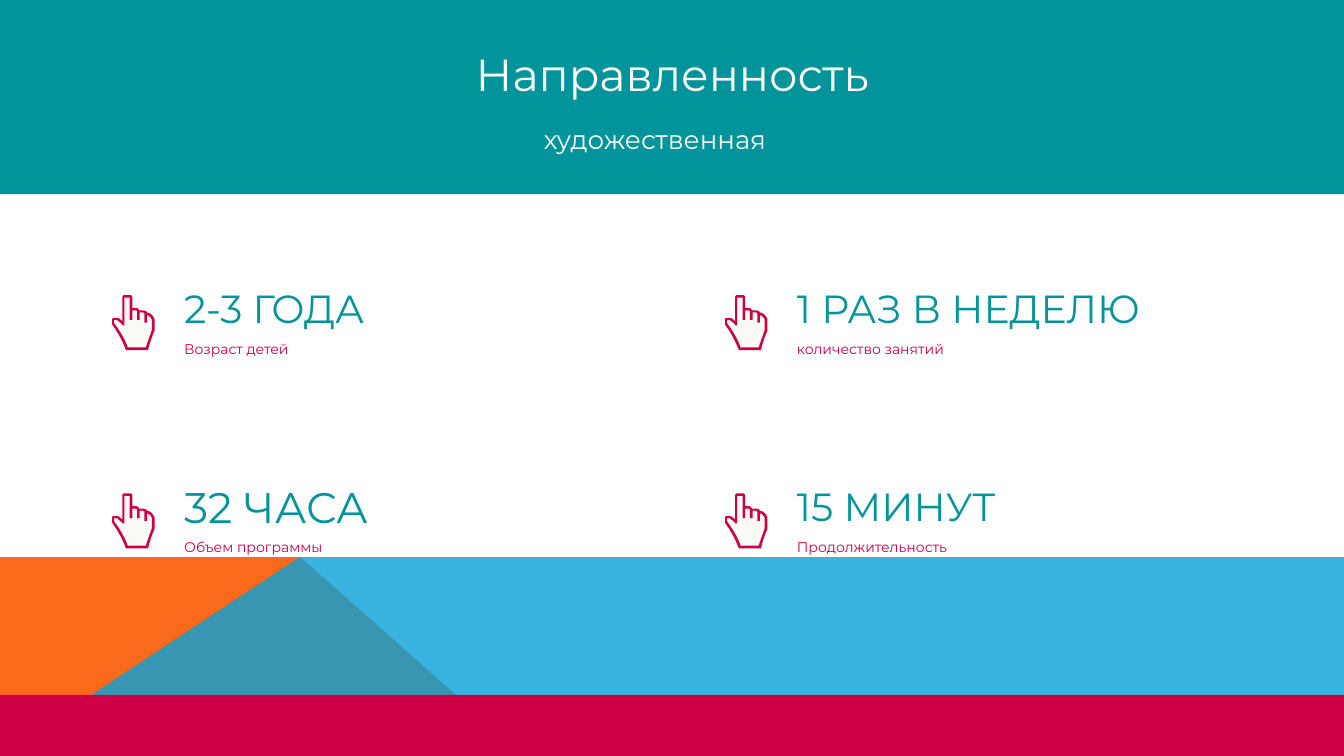
import dataclasses

import lxml.etree
import pptx
import pptx.dml.color
import pptx.enum.shapes
import pptx.enum.text
import pptx.oxml.ns
import pptx.util

COLUMNS, ROWS = 20, 11.25
ALIGN = pptx.enum.text.PP_ALIGN

PALM = [
    (59, 52), (58, 55, 52, 72, 50, 78), (23, 78), (22, 74, 16, 59, 3, 42),
    (3, 37), (7, 37), (8, 38, 12, 41, 15, 44), (15, 45), (18, 45), (18, 4),
    (26, 4), (26, 37), (30, 37), (30, 23), (35, 23), (36, 23, 37, 24, 37, 24),
    (37, 37), (41, 37), (41, 26), (46, 26), (47, 26, 48, 27, 48, 28),
    (48, 41), (52, 41), (52, 30), (55, 30, 59, 35, 59, 37),
]
HAND_EDGE = [
    (52, 26), (51, 24, 49, 23, 46, 23), (40, 23), (40, 21, 37, 19, 35, 19),
    (30, 19), (30, 4), (30, 1, 28, 0, 26, 0), (18, 0), (16, 0, 15, 2, 15, 4),
    (15, 39), (11, 35, 9, 34, 7, 34), (3, 34), (3, 34, 2, 34, 1, 34),
    (0, 35, 0, 36, 0, 37), (0, 44), (14, 63, 20, 81, 20, 81), (21, 82),
    (54, 82), (54, 80), (54, 77, 59, 62, 63, 53), (63, 37),
    (63, 33, 57, 26, 52, 26),
]


@dataclasses.dataclass(frozen=True)
class Theme:
    font: str = "Montserrat"
    teal: str = "01949A"
    crimson: str = "CD0046"
    cream: str = "FBFBF5"
    orange: str = "F96A1B"
    sky: str = "08A1D9"
    title: tuple = (48, 53.3)
    subtitle: tuple = (28, 31.1)
    heading: tuple = (42, 44.1)
    large_heading: tuple = (45.8, 48)
    caption: tuple = (15, 21)


def apply_format(target, values):
    for name, value in values.items():
        setattr(target, name, value)


def flatten(segments, steps=6):
    points = [segments[0]]
    for segment in segments[1:]:
        if len(segment) == 2:
            points.append(segment)
            continue
        curve = [points[-1], segment[:2], segment[2:4], segment[4:]]
        for step in range(1, steps + 1):
            t = step / steps
            weights = ((1 - t) ** 3, 3 * t * (1 - t) ** 2, 3 * t * t * (1 - t), t ** 3)
            points.append(tuple(
                sum(w * p[axis] for w, p in zip(weights, curve)) for axis in (0, 1)
            ))
    return points


class SlideBuilder:
    def __init__(self, presentation, theme):
        self.theme = theme
        self.column = presentation.slide_width / COLUMNS
        self.row = presentation.slide_height / ROWS
        self.slide = presentation.slides.add_slide(presentation.slide_layouts[6])

    def place(self, column, row):
        return round(column * self.column), round(row * self.row)

    def paint(self, shape, color, opacity=None):
        shape.shadow.inherit = False
        shape.fill.solid()
        shape.fill.fore_color.rgb = pptx.dml.color.RGBColor.from_string(color)
        shape.line.fill.background()
        if opacity is not None:
            qn = pptx.oxml.ns.qn
            tint = shape._element.spPr.find(qn("a:solidFill")).find(qn("a:srgbClr"))
            lxml.etree.SubElement(tint, qn("a:alpha")).set("val", str(opacity * 1000))

    def band(self, column, row, columns, rows, color):
        band = self.slide.shapes.add_shape(
            pptx.enum.shapes.MSO_SHAPE.RECTANGLE,
            *self.place(column, row), *self.place(columns, rows),
        )
        self.paint(band, color)

    def outline(self, contours, color, opacity=None):
        first, *others = [[self.place(*point) for point in c] for c in contours]
        builder = self.slide.shapes.build_freeform(*first[0])
        builder.add_line_segments(first[1:], close=True)
        for contour in others:
            builder.move_to(*contour[0])
            builder.add_line_segments(contour[1:], close=True)
        self.paint(builder.convert_to_shape(), color, opacity)

    def text(self, words, column, row, columns, rows, style, color, align=ALIGN.LEFT):
        size, spacing = style
        box = self.slide.shapes.add_textbox(
            *self.place(column, row), *self.place(columns, rows)
        )
        frame = box.text_frame
        apply_format(frame, {
            "margin_left": 0, "margin_right": 0, "margin_top": 0, "margin_bottom": 0,
            "word_wrap": True,
            "auto_size": pptx.enum.text.MSO_AUTO_SIZE.SHAPE_TO_FIT_TEXT,
        })
        paragraph = frame.paragraphs[0]
        apply_format(paragraph, {
            "alignment": align, "line_spacing": pptx.util.Pt(spacing),
        })
        run = paragraph.add_run()
        run.text = words
        apply_format(run.font, {"name": self.theme.font, "size": pptx.util.Pt(size)})
        run.font.color.rgb = pptx.dml.color.RGBColor.from_string(color)

    def hand(self, column, row):
        palm, edge = (
            [(column + x / 100, row + y / 100) for x, y in flatten(segments)]
            for segments in (PALM, HAND_EDGE)
        )
        self.outline([palm], self.theme.cream)
        self.outline([edge, palm], self.theme.crimson)

    def fact(self, column, row, heading, caption, style, rise, rows):
        left = column + 1.07
        self.text(heading, left, row - rise, 6.47, rows, style, self.theme.teal)
        self.text(caption, left, row + 0.63, 6.47, 0.28,
                  self.theme.caption, self.theme.crimson)


def main():
    presentation = pptx.Presentation()
    apply_format(presentation, {
        "slide_width": pptx.util.Inches(20), "slide_height": pptx.util.Inches(11.25),
    })
    theme = Theme()
    page = SlideBuilder(presentation, theme)

    regular = (theme.heading, 0.07, 0.64)
    large = (theme.large_heading, 0.09, 0.71)
    facts = [
        ("2-3 ГОДА", "Возраст детей", regular),
        ("32 ЧАСА", "Объем программы", large),
        ("1 РАЗ В НЕДЕЛЮ", "количество занятий", regular),
        ("15 МИНУТ", "Продолжительность", regular),
    ]
    spots = [(1.67 + 9.12 * (i // 2), 4.39 + 2.95 * (i % 2)) for i in range(len(facts))]

    horizon = 8.29
    page.outline([[(0, ROWS), (-0.01, horizon), (4.47, horizon), (7.81, ROWS)]],
                 theme.orange)
    page.outline([[(-0.01, ROWS), (4.46, horizon), (COLUMNS, horizon), (COLUMNS, ROWS)]],
                 theme.sky, opacity=80)
    page.band(-0.32, 10.34, 20.55, 1.12, theme.crimson)
    for spot, (heading, caption, layout) in zip(spots, facts):
        page.fact(*spot, heading, caption, *layout)
    page.band(-0.47, -0.49, 20.99, 3.38, theme.teal)
    page.text("Направленность", 6.76, 0.76, 6.49, 0.75,
              theme.title, theme.cream, ALIGN.CENTER)
    for spot in spots:
        page.hand(*spot)
    page.text("художественная", 6.5, 1.87, 6.49, 0.43,
              theme.subtitle, theme.cream, ALIGN.CENTER)

    presentation.save("out.pptx")


if __name__ == "__main__":
    main()
